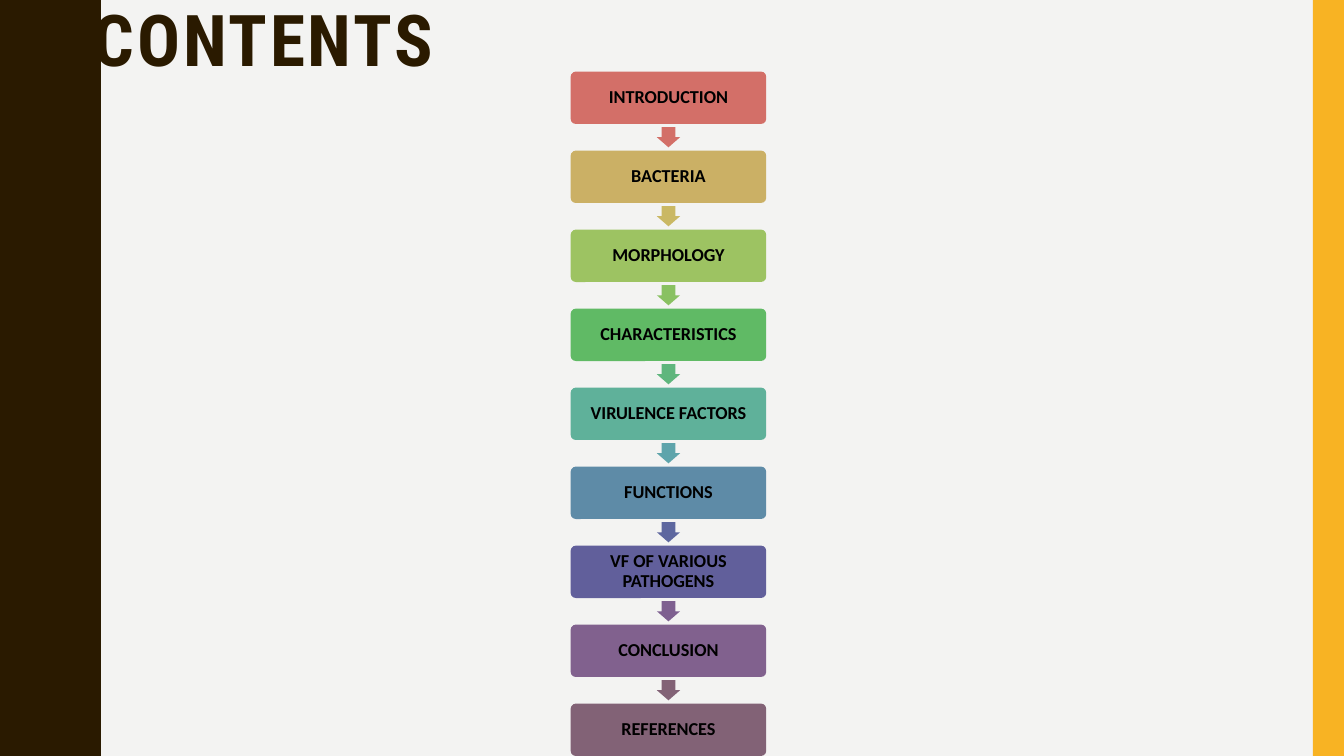
from pptx import Presentation
from pptx.dml.color import RGBColor
from pptx.enum.shapes import MSO_SHAPE
from pptx.enum.text import MSO_ANCHOR, MSO_AUTO_SIZE, PP_ALIGN
from pptx.util import Inches, Pt

RECT = MSO_SHAPE.RECTANGLE
ROUNDED = MSO_SHAPE.ROUNDED_RECTANGLE
ARROW = MSO_SHAPE.RIGHT_ARROW
TOP, MIDDLE = MSO_ANCHOR.TOP, MSO_ANCHOR.MIDDLE
LEFT, CENTER = PP_ALIGN.LEFT, PP_ALIGN.CENTER
NO_AUTOFIT = MSO_AUTO_SIZE.NONE

BROWN = "2A1A00"
HEIGHT = 7.5
TOPICS = [
    ("INTRODUCTION", "D36F68", "D36F68"),
    ("BACTERIA", "CBB065", "CAB864"),
    ("MORPHOLOGY", "9DC362", "89C162"),
    ("CHARACTERISTICS", "60BA65", "5FB67D"),
    ("VIRULENCE FACTORS", "5FB19A", "5EA4AB"),
    ("FUNCTIONS", "5E8BA7", "5E679F"),
    ("VF OF VARIOUS PATHOGENS", "615F9B", "7E6090"),
    ("CONCLUSION", "81618E", "826276"),
    ("REFERENCES", "826276", None),
]


def paint(shape, color):
    shape.fill.solid()
    shape.fill.fore_color.rgb = RGBColor.from_string(color)
    shape.line.fill.background()
    shape.shadow.inherit = False


def style_text(paragraph, font_name, size, color, align):
    paragraph.alignment = align
    paragraph.line_spacing = 0.9
    font = paragraph.runs[0].font
    font.name = font_name
    font.size = Pt(size)
    font.bold = True
    font.color.rgb = RGBColor.from_string(color)


prs = Presentation()
prs.slide_width = Inches(13.33)
prs.slide_height = Inches(HEIGHT)
slide = prs.slides.add_slide(prs.slide_layouts[5])
slide.background.fill.solid()
slide.background.fill.fore_color.rgb = RGBColor.from_string("F3F3F2")
shapes = slide.shapes

half_wave = [
    (0.78, 0), (0.78, 0.07), (0.79, 0.14), (0.8, 0.2), (0.81, 0.25),
    (0.83, 0.29), (0.85, 0.33), (0.87, 0.38), (0.89, 0.42), (0.91, 0.46),
    (0.93, 0.5), (0.95, 0.55), (0.96, 0.61), (0.97, 0.68), (0.97, 0.75),
]
wave_length = 1.5
full_wave = half_wave + [(x, wave_length - y) for x, y in half_wave[-2::-1]]
edge = [(x, y + i * wave_length) for i in range(5) for x, y in full_wave]
wavy_band = shapes.build_freeform(0, 0, scale=Inches(1))
wavy_band.add_line_segments(edge + [(0, HEIGHT)], close=True)
paint(wavy_band.convert_to_shape(), BROWN)

side_bar = shapes.add_shape(RECT, Inches(13.02), 0, Inches(0.31), Inches(HEIGHT))
paint(side_bar, "F8B323")

title = shapes.title
title.left, title.top = Inches(0.83), Inches(0)
title.width, title.height = Inches(11.13), Inches(1.63)
title.text_frame.text = "CONTENTS"
title.text_frame.vertical_anchor = TOP
title.text_frame.auto_size = NO_AUTOFIT
heading = title.text_frame.paragraphs[0]
style_text(heading, "Roboto Condensed", 51, BROWN, LEFT)
heading.runs[0].font._element.set("spc", "200")

box_left, box_top, box_width, box_height = 5.66, 0.71, 1.94, 0.52
arrow_length, arrow_breadth = 0.2, 0.23
arrow_left = box_left + (box_width - arrow_length) / 2
step = (HEIGHT - box_height - box_top) / (len(TOPICS) - 1)

for i, (topic, box_color, arrow_color) in enumerate(TOPICS):
    top = box_top + i * step
    box = shapes.add_shape(ROUNDED, Inches(box_left), Inches(top),
                           Inches(box_width), Inches(box_height))
    box.adjustments[0] = 0.1
    paint(box, box_color)
    frame = box.text_frame
    frame.word_wrap = True
    frame.vertical_anchor = MIDDLE
    frame.margin_left = frame.margin_right = Inches(0.06)
    frame.margin_top = frame.margin_bottom = Inches(0.06)
    frame.text = topic
    style_text(frame.paragraphs[0], "Calibri", 13, "000000", CENTER)

    if arrow_color:
        gap_middle = top + (box_height + step) / 2
        arrow = shapes.add_shape(ARROW, Inches(arrow_left),
                                 Inches(gap_middle - arrow_breadth / 2),
                                 Inches(arrow_length), Inches(arrow_breadth))
        arrow.rotation = 90
        arrow.adjustments[0] = 0.6
        arrow.adjustments[1] = 0.5
        paint(arrow, arrow_color)

prs.save("out.pptx")
